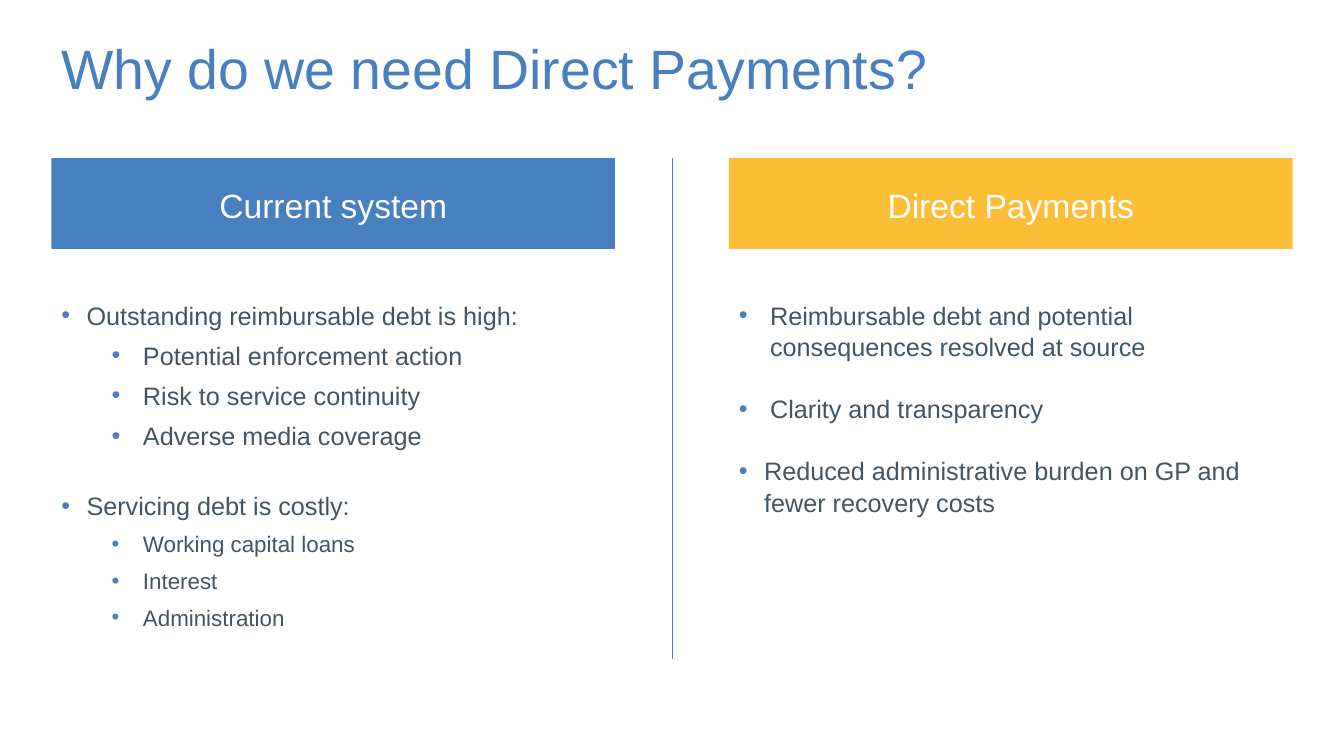
from lxml import etree
from pptx import Presentation
from pptx.dml.color import RGBColor
from pptx.enum import shapes, text
from pptx.oxml import ns
from pptx.util import Inches, Pt

BLUE, AMBER, SLATE, WHITE = "477FBF", "FDBE37", "425563", "FFFFFF"
COLUMN_WIDTH = Inches(5.59)
COLUMN_TOP = Inches(1.57)


def write(paragraph, content, size=18, color=SLATE, align=text.PP_ALIGN.LEFT,
          line_spacing=1.05, before=0, margin=0, hanging=0):
    """Fill a paragraph; a hanging indent in inches also gives it a bullet."""
    if hanging:
        properties = paragraph._p.get_or_add_pPr()
        properties.set("marL", str(Inches(margin)))
        properties.set("indent", str(-Inches(hanging)))
        bullet_color = etree.SubElement(properties, ns.qn("a:buClr"))
        etree.SubElement(bullet_color, ns.qn("a:srgbClr"), val=BLUE)
        etree.SubElement(properties, ns.qn("a:buFont"), typeface="Arial")
        etree.SubElement(properties, ns.qn("a:buChar"), char="•")
    paragraph.alignment = align
    paragraph.line_spacing = line_spacing
    paragraph.space_before = Pt(before)
    paragraph.space_after = Pt(0)
    run = paragraph.add_run()
    run.text = content
    run.font.name = "Arial"
    run.font.size = Pt(size)
    run.font.color.rgb = RGBColor.from_string(color)


presentation = Presentation()
presentation.slide_width = Inches(13.33)
presentation.slide_height = Inches(7.5)
slide = presentation.slides.add_slide(presentation.slide_layouts[5])

title = slide.shapes.title
title.left, title.top = Inches(0.51), Inches(0.37)
title.width, title.height = Inches(9.06), Inches(0.67)
title.text_frame.auto_size = text.MSO_AUTO_SIZE.NONE
title.text_frame.vertical_anchor = text.MSO_ANCHOR.MIDDLE
write(title.text_frame.paragraphs[0], "Why do we need Direct Payments?",
      size=39.6, color=BLUE, line_spacing=0.9)

divider = slide.shapes.add_connector(
    shapes.MSO_CONNECTOR.STRAIGHT, Inches(6.67), COLUMN_TOP, Inches(6.67), Inches(6.54))
divider.line.color.rgb = RGBColor.from_string(BLUE)
divider.line.width = Pt(0.5)
etree.SubElement(divider._element.spPr, ns.qn("a:effectLst"))

# Each bullet: text, size, space before, left margin, hanging indent
columns = [
    (0.51, BLUE, "Current system", [
        ("Outstanding reimbursable debt is high:", 18, 0, 0.25, 0.25),
        ("Potential enforcement action", 18, 6, 0.81, 0.31),
        ("Risk to service continuity", 18, 6, 0.81, 0.31),
        ("Adverse media coverage", 18, 6, 0.81, 0.31),
        ("Servicing debt is costly:", 18, 27.5, 0.25, 0.25),
        ("Working capital loans", 16, 6, 0.81, 0.31),
        ("Interest", 16, 6, 0.81, 0.31),
        ("Administration", 16, 6, 0.81, 0.31),
    ]),
    (7.23, AMBER, "Direct Payments", [
        ("Reimbursable debt and potential consequences resolved at source", 18, 0, 0.31, 0.31),
        ("Clarity and transparency", 18, 21.5, 0.31, 0.31),
        ("Reduced administrative burden on GP and fewer recovery costs", 18, 21.5, 0.25, 0.25),
    ]),
]

for left, fill, heading, bullets in columns:
    header = slide.shapes.add_shape(
        shapes.MSO_SHAPE.RECTANGLE, Inches(left), COLUMN_TOP, COLUMN_WIDTH, Inches(0.9))
    header.shadow.inherit = False
    header.fill.solid()
    header.fill.fore_color.rgb = RGBColor.from_string(fill)
    header.line.fill.background()
    header.text_frame.vertical_anchor = text.MSO_ANCHOR.MIDDLE
    write(header.text_frame.paragraphs[0], heading, size=24, color=WHITE,
          align=text.PP_ALIGN.CENTER)

    body = slide.shapes.add_textbox(Inches(left), Inches(2.76), COLUMN_WIDTH, Inches(3.84))
    frame = body.text_frame
    frame.word_wrap = True
    frame.margin_top = Inches(0.2)
    for index, (content, size, before, margin, hanging) in enumerate(bullets):
        paragraph = frame.add_paragraph() if index else frame.paragraphs[0]
        write(paragraph, content, size=size, before=before, margin=margin, hanging=hanging)

presentation.save("out.pptx")
